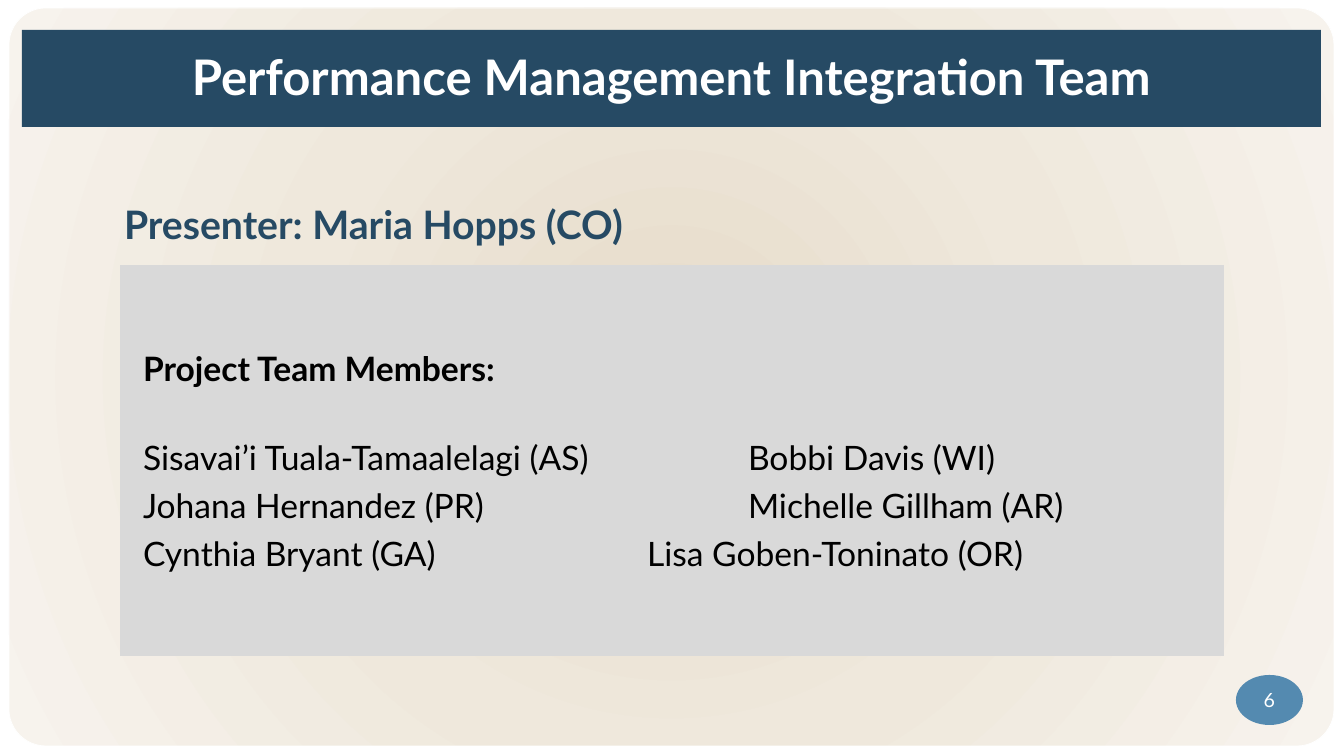
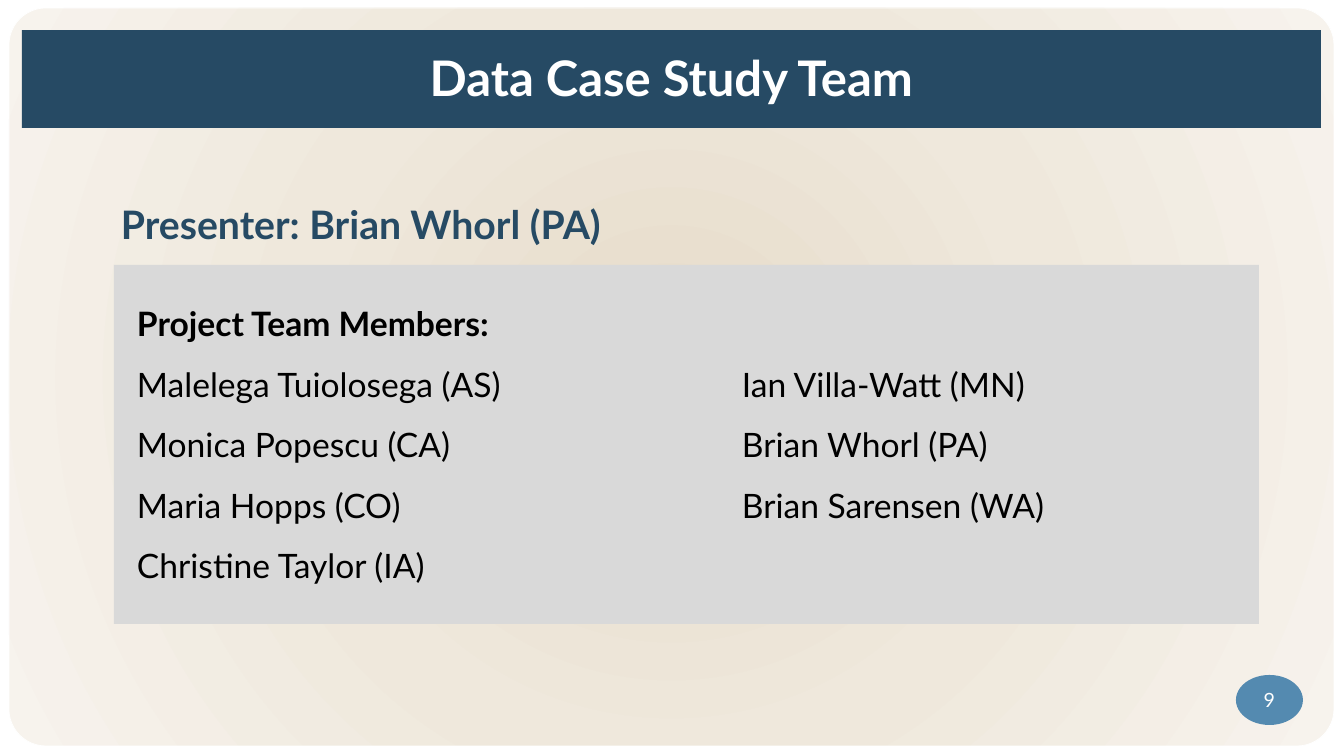
from pptx import Presentation
from pptx.dml.color import RGBColor
from pptx.enum.shapes import MSO_SHAPE
from pptx.enum.text import MSO_ANCHOR, PP_ALIGN
from pptx.oxml import parse_xml
from pptx.oxml.ns import nsdecls, qn
from pptx.util import Pt

PX = 914400 / 100.8  # EMU in one px

NAVY = RGBColor(0x26, 0x4A, 0x64)
BLUE = RGBColor(0x54, 0x8A, 0xB0)
GRAY = RGBColor(0xD9, 0xD9, 0xD9)
WHITE = RGBColor(0xFF, 0xFF, 0xFF)
BLACK = RGBColor(0x00, 0x00, 0x00)
FRAME_STOPS = {0: "E6DBC9", 50: "EFE8DC", 100: "F7F3ED"}

FONT = "Lato"
TITLE_STYLE = {"size": Pt(35), "bold": True, "color": WHITE}
PRESENTER_STYLE = {"size": Pt(28), "bold": True, "color": NAVY}
HEADING_STYLE = {"size": Pt(24), "bold": True, "color": BLACK}
MEMBER_STYLE = {"size": Pt(24), "bold": False, "color": BLACK}
NUMBER_STYLE = {"size": Pt(14), "bold": False, "color": WHITE}

TITLE_INSETS = (10, 5, 10, 10)
PRESENTER_INSETS = (29, 5, 10, 18)
MEMBERS_INSETS = (23, 5, 10, 5)
NUMBER_INSETS = (0, 0, 0, 0)

# Each member row: left name, right name, px from the left name to the right one
TEAMS = [
    {
        "title": "Performance Management Integration Team",
        "title_height": 97,
        "presenter": "Presenter: Maria Hopps (CO)",
        "presenter_left": 95,
        "members_place": (120, 265, 1104, 391),
        "line_spacing": 1.2,
        "heading_gap": Pt(29),
        "members": [
            ("Sisavai’i Tuala-Tamaalelagi (AS)", "Bobbi Davis (WI)", 605),
            ("Johana Hernandez (PR)", "Michelle Gillham (AR)", 605),
            ("Cynthia Bryant (GA)", "Lisa Goben-Toninato (OR)", 504),
        ],
        "number": "6",
    },
    {
        "title": "Data Case Study Team",
        "title_height": 98,
        "presenter": "Presenter: Brian Whorl (PA)",
        "presenter_left": 92,
        "members_place": (114, 265, 1145, 359),
        "line_spacing": 1.5,
        "heading_gap": Pt(0),
        "members": [
            ("Malelega Tuiolosega (AS)", "Ian Villa-Watt (MN)", 605),
            ("Monica Popescu (CA)", "Brian Whorl (PA)", 605),
            ("Maria Hopps (CO)", "Brian Sarensen (WA)", 605),
            ("Christine Taylor (IA)", "", 605),
        ],
        "number": "9",
    },
]


def add_box(page, kind, place, fill, insets, anchor=MSO_ANCHOR.MIDDLE):
    """Add a borderless shape, or a text box when kind is None."""
    place = [round(length * PX) for length in place]
    if kind is None:
        box = page.shapes.add_textbox(*place)
    else:
        box = page.shapes.add_shape(kind, *place)
        box.shadow.inherit = False
        box.fill.solid()
        box.fill.fore_color.rgb = fill
        box.line.fill.background()
    frame = box.text_frame
    frame.word_wrap = True
    frame.vertical_anchor = anchor
    for side, inset in zip(("left", "top", "right", "bottom"), insets):
        setattr(frame, f"margin_{side}", round(inset * PX))
    return box


def write(para, text, style, align=PP_ALIGN.LEFT):
    para.alignment = align
    span = para.add_run()
    span.text = text
    span.font.name = FONT
    for name, value in style.items():
        if name == "color":
            span.font.color.rgb = value
        else:
            setattr(span.font, name, value)


deck = Presentation()
deck.slide_width = round(1344 * PX)
deck.slide_height = round(756 * PX)

for team in TEAMS:
    page = deck.slides.add_slide(deck.slide_layouts[6])
    page.background.fill.solid()
    page.background.fill.fore_color.rgb = WHITE

    # Rounded frame with a radial gradient
    frame = add_box(page, MSO_SHAPE.ROUNDED_RECTANGLE, (9, 8, 1325, 738), WHITE, NUMBER_INSETS)
    frame.adjustments[0] = 0.05
    frame.line.color.rgb = WHITE
    frame.line.width = Pt(0.5)
    stops = "".join(
        f'<a:gs pos="{percent * 1000}"><a:srgbClr val="{color}"/></a:gs>'
        for percent, color in FRAME_STOPS.items()
    )
    gradient = parse_xml(
        f'<a:gradFill {nsdecls("a")} rotWithShape="1"><a:gsLst>{stops}</a:gsLst>'
        '<a:path path="circle"><a:fillToRect l="50000" t="50000" r="50000" b="50000"/>'
        "</a:path></a:gradFill>"
    )
    properties = frame.element.spPr
    properties.replace(properties.find(qn("a:solidFill")), gradient)

    title = add_box(page, MSO_SHAPE.RECTANGLE, (22, 30, 1299, team["title_height"]), NAVY, TITLE_INSETS)
    write(title.text_frame.paragraphs[0], team["title"], TITLE_STYLE, PP_ALIGN.CENTER)

    presenter = add_box(
        page, None, (team["presenter_left"], 86, 837, 179), None, PRESENTER_INSETS, MSO_ANCHOR.BOTTOM
    )
    write(presenter.text_frame.paragraphs[0], team["presenter"], PRESENTER_STYLE)

    members = add_box(page, MSO_SHAPE.RECTANGLE, team["members_place"], GRAY, MEMBERS_INSETS)
    write(members.text_frame.paragraphs[0], "Project Team Members:", HEADING_STYLE)
    for row, (left_name, right_name, column) in enumerate(team["members"]):
        para = members.text_frame.add_paragraph()
        para.line_spacing = team["line_spacing"]
        if row == 0:
            para.space_before = team["heading_gap"]
        text = left_name
        if right_name:
            text = f"{left_name}\t{right_name}"
            para.element.get_or_add_pPr().append(parse_xml(
                f'<a:tabLst {nsdecls("a")}><a:tab pos="{round(column * PX)}" algn="l"/></a:tabLst>'
            )) if hasattr(para, "element") else para._p.get_or_add_pPr().append(parse_xml(
                f'<a:tabLst {nsdecls("a")}><a:tab pos="{round(column * PX)}" algn="l"/></a:tabLst>'
            ))
        write(para, text, MEMBER_STYLE)

    number = add_box(page, MSO_SHAPE.OVAL, (1236, 675, 67, 50), BLUE, NUMBER_INSETS)
    number.text_frame.word_wrap = False
    write(number.text_frame.paragraphs[0], team["number"], NUMBER_STYLE, PP_ALIGN.CENTER)

deck.save("out.pptx")
